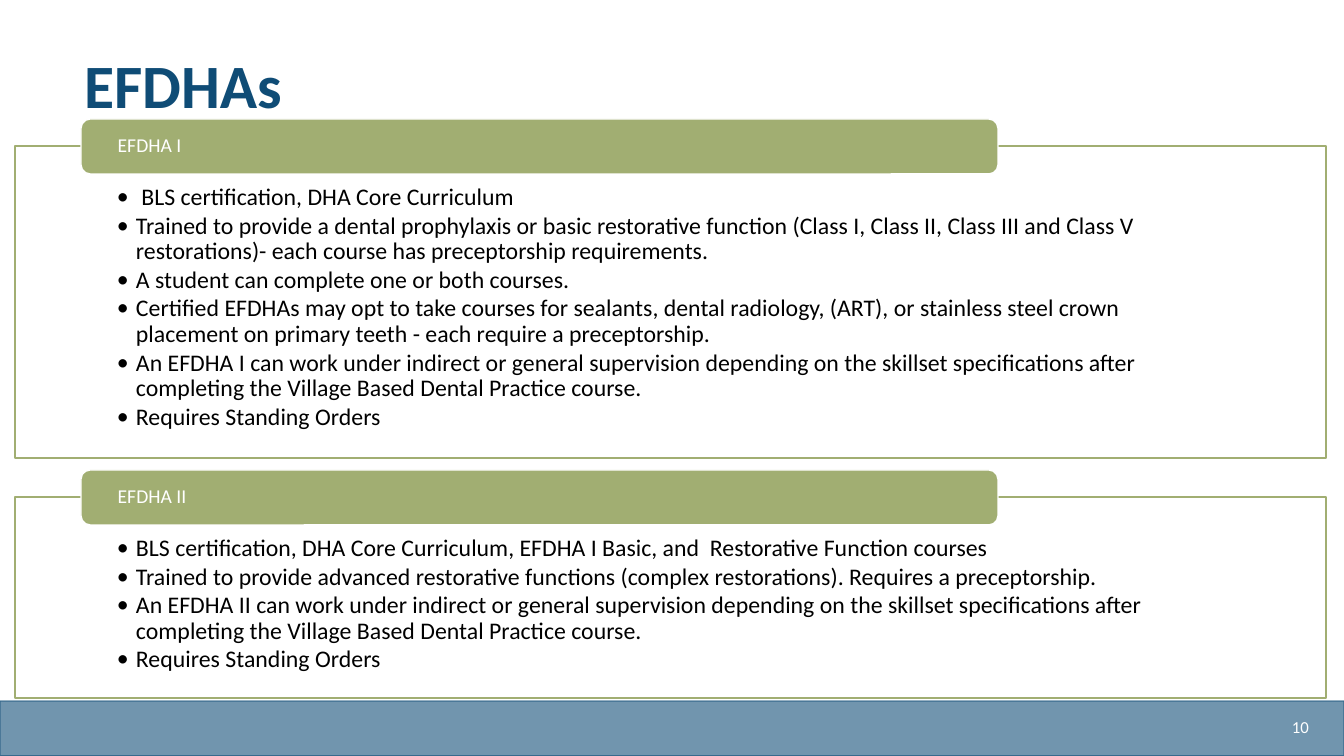
from lxml.etree import SubElement
from pptx import Presentation
from pptx.dml.color import RGBColor
from pptx.enum.shapes import MSO_SHAPE
from pptx.enum.text import MSO_ANCHOR, MSO_AUTO_SIZE, PP_ALIGN
from pptx.oxml.ns import qn
from pptx.util import Pt

SCALE = 914400 / 100.8
COLORS = {"navy": "0F4C76", "green": "A1AE72", "white": "FFFFFF", "black": "000000"}

PANELS = [
    ("EFDHA I", 146, 312, [
        " BLS certification, DHA Core Curriculum",
        "Trained to provide a dental prophylaxis or basic restorative function (Class I, Class II, "
        "Class III and Class V restorations)- each course has preceptorship requirements.",
        "A student can complete one or both courses.",
        "Certified EFDHAs may opt to take courses for sealants, dental radiology, (ART), or "
        "stainless steel crown placement on primary teeth - each require a preceptorship.",
        "An EFDHA I can work under indirect or general supervision depending on the skillset "
        "specifications after completing the Village Based Dental Practice course.",
        "Requires Standing Orders",
    ]),
    ("EFDHA II", 497, 201, [
        "BLS certification, DHA Core Curriculum, EFDHA I Basic, and  Restorative Function courses",
        "Trained to provide advanced restorative functions (complex restorations). "
        "Requires a preceptorship.",
        "An EFDHA II can work under indirect or general supervision depending on the skillset "
        "specifications after completing the Village Based Dental Practice course.",
        "Requires Standing Orders",
    ]),
]


def px(n):
    return round(n * SCALE)


def assign(item, values):
    for name, value in values.items():
        setattr(item, name, value)


class Deck:
    font = "Calibri"

    def __init__(self, show, layout):
        self.slide = show.slides.add_slide(show.slide_layouts[layout])

    def place(self, shape, box):
        assign(shape, dict(zip(("left", "top", "width", "height"), map(px, box))))

    def paint(self, shape, fill, line, alpha=100, edge=100):
        shape.fill.solid()
        shape.line.width = Pt(1)
        shape.line.fill.solid()
        for part, color in ((shape.fill, fill), (shape.line.fill, line)):
            part.fore_color.rgb = RGBColor.from_string(COLORS[color])
        # Transparency of fill and line
        props = shape._element.spPr
        for tree, level in ((props, alpha), (props.find(qn("a:ln")), edge)):
            if level < 100:
                color = tree.find(qn("a:solidFill"))[0]
                SubElement(color, qn("a:alpha"), val=str(level * 1000))

    def label(self, shape, lines, size, color, pad, anchor=MSO_ANCHOR.MIDDLE,
              align=PP_ALIGN.LEFT, bold=False, bullet=False):
        frame = shape.text_frame
        names = ("margin_left", "margin_top", "margin_right", "margin_bottom")
        assign(frame, {"word_wrap": True, "auto_size": MSO_AUTO_SIZE.NONE,
                       "vertical_anchor": anchor, **dict(zip(names, map(px, pad)))})
        for i, line in enumerate(lines):
            para = frame.add_paragraph() if i else frame.paragraphs[0]
            if bullet:
                self.mark(para)
            assign(para, {"alignment": align, "line_spacing": 0.9, "space_before": Pt(0),
                          "space_after": Pt(2 if bullet else 0)})
            run = para.add_run()
            run.text = line
            assign(run.font, {"name": self.font, "size": Pt(size), "bold": bold})
            run.font.color.rgb = RGBColor.from_string(COLORS[color])

    def mark(self, para):
        props = para._p.get_or_add_pPr()
        props.set("marL", str(px(19)))
        props.set("indent", str(px(-19)))
        SubElement(props, qn("a:buFont"), typeface=self.font)
        SubElement(props, qn("a:buChar"), char="•")

    def title(self, text, box):
        shape = self.slide.shapes.title
        self.place(shape, box)
        self.label(shape, [text], 44, "navy", (10, 5, 10, 5), bold=True)

    def list(self, index, lines, box):
        shape = self.slide.placeholders[index]
        self.place(shape, box)
        self.paint(shape, "white", "green", alpha=90)
        self.label(shape, lines, 17, "black", (102, 39, 102, 13), MSO_ANCHOR.TOP, bullet=True)

    def shape(self, kind, box, *style):
        shape = self.slide.shapes.add_shape(kind, *map(px, box))
        shape.shadow.inherit = False
        self.paint(shape, *style)
        return shape

    def tab(self, text, box):
        shape = self.shape(MSO_SHAPE.ROUNDED_RECTANGLE, box, "green", "white")
        self.label(shape, [text], 14, "white", (34, 0, 34, 0))

    def number(self, text, box):
        shape = self.slide.shapes.add_textbox(*map(px, box))
        self.label(shape, [text], 12, "white", (10, 5, 10, 5), align=PP_ALIGN.RIGHT)


def main():
    show = Presentation()
    assign(show, {"slide_width": px(1344), "slide_height": px(756)})
    deck = Deck(show, 3)

    # Heading
    deck.title("EFDHAs", (74, 49, 1064, 79))

    # Framed lists, each with a tab across its top edge
    for index, (label, top, height, lines) in enumerate(PANELS, 1):
        deck.list(index, lines, (15, top, 1311, height))
        deck.tab(label, (81, top - 27, 917, 55))

    # Footer band and page number
    deck.shape(MSO_SHAPE.RECTANGLE, (0, 701, 1344, 55), "navy", "navy", 59, 59)
    deck.number("10", (1175, 708, 144, 40))

    show.save("out.pptx")


if __name__ == "__main__":
    main()
